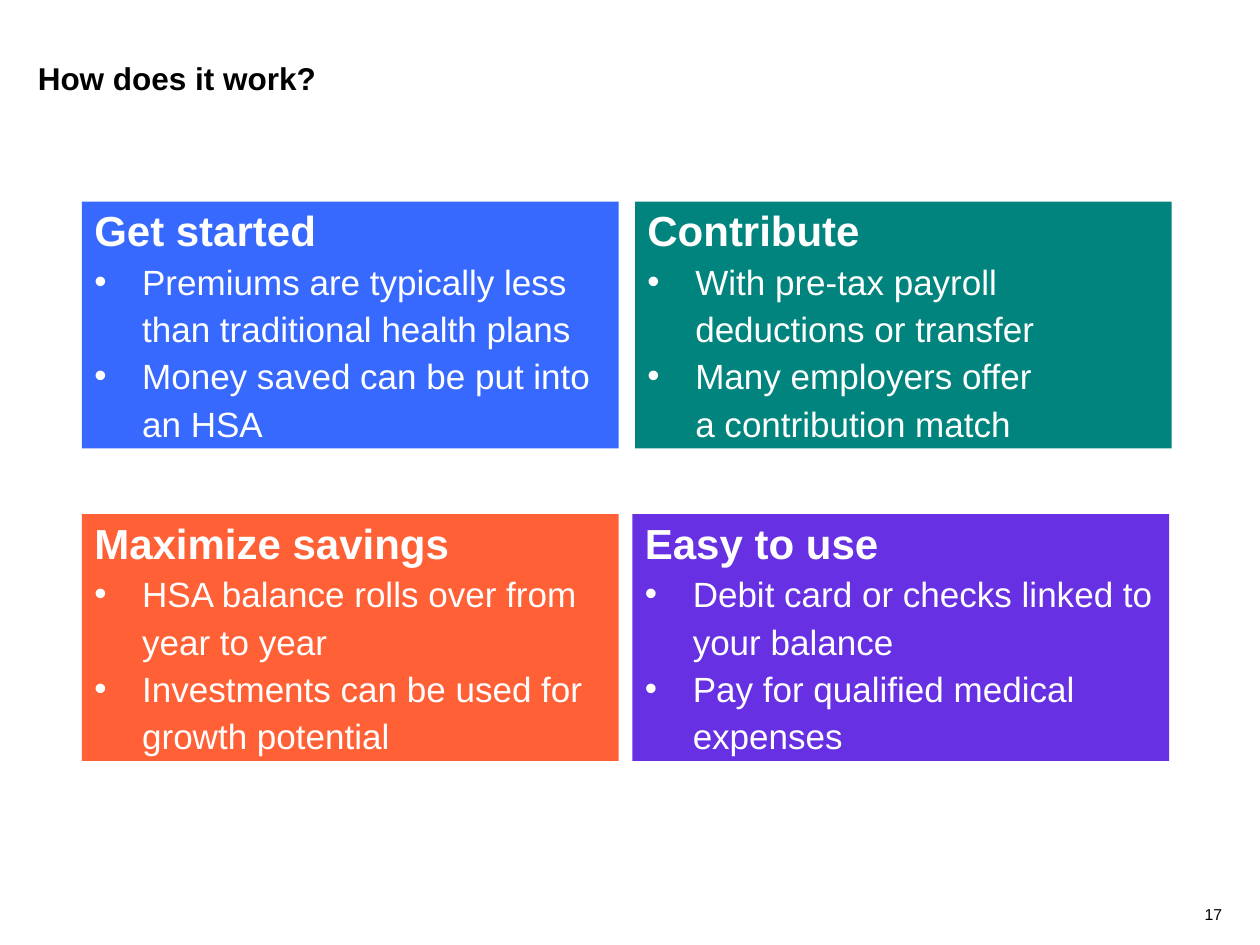
import pptx
import pptx.util
import pptx.dml.color
import pptx.enum.shapes
import pptx.enum.text
from lxml import etree

Inches = pptx.util.Inches
Pt = pptx.util.Pt
ALIGN = pptx.enum.text.PP_ALIGN
ANCHOR = pptx.enum.text.MSO_ANCHOR

BLACK, WHITE = "000000", "FFFFFF"
CARD_WIDTH, CARD_HEIGHT = 4.26, 1.96
BULLET_INDENT = Inches(0.38)

# Left, top, fill, heading, bullet points
CARDS = [
    (0.65, 1.6, "3769FF", "Get started",
     ["Premiums are typically less than traditional health plans",
      "Money saved can be put into an HSA"]),
    (5.04, 1.6, "00847D", "Contribute",
     ["With pre-tax payroll deductions or transfer",
      "Many employers offer\va contribution match"]),
    (0.65, 4.08, "FF6035", "Maximize savings",
     ["HSA balance rolls over from year to year",
      "Investments can be used for growth potential"]),
    (5.02, 4.08, "6730E3", "Easy to use",
     ["Debit card or checks linked to your balance",
      "Pay for qualified medical expenses"]),
]


def color(hex_value):
    return pptx.dml.color.RGBColor.from_string(hex_value)


def set_all(target, values):
    for name, value in values.items():
        setattr(target, name, value)


def write(paragraph, text, size, hex_value, bold=False, **layout):
    paragraph.text = text
    set_all(paragraph, layout)
    for run in paragraph.runs:
        set_all(run.font, {"name": "Arial", "size": Pt(size), "bold": bold})
        run.font.color.rgb = color(hex_value)


def set_frame(frame, anchor, margin_x=0, margin_y=0):
    set_all(frame, {
        "word_wrap": True, "auto_size": pptx.enum.text.MSO_AUTO_SIZE.NONE,
        "vertical_anchor": anchor,
        "margin_left": Inches(margin_x), "margin_right": Inches(margin_x),
        "margin_top": Inches(margin_y), "margin_bottom": Inches(margin_y),
    })


def add_bullet(paragraph):
    properties = paragraph._p.get_or_add_pPr()
    properties.set("marL", str(BULLET_INDENT))
    properties.set("indent", str(-BULLET_INDENT))
    namespace = pptx.oxml.ns.qn("a:buFont"), pptx.oxml.ns.qn("a:buChar")
    etree.SubElement(properties, namespace[0], typeface="Arial")
    etree.SubElement(properties, namespace[1], char="•")


def place_title(slide, left, top, width, height):
    title = slide.shapes.title
    set_all(title, {"left": Inches(left), "top": Inches(top),
                    "width": Inches(width), "height": Inches(height)})
    set_frame(title.text_frame, ANCHOR.TOP)
    write(title.text_frame.paragraphs[0], "How does it work?", 18, BLACK,
          bold=True, alignment=ALIGN.LEFT)


def place_card(slide, left, top, width, height, fill, heading, points):
    card = slide.shapes.add_shape(
        pptx.enum.shapes.MSO_SHAPE.RECTANGLE,
        Inches(left), Inches(top), Inches(width), Inches(height))
    card.shadow.inherit = False
    card.fill.solid()
    card.fill.fore_color.rgb = color(fill)
    card.line.fill.background()

    frame = card.text_frame
    set_frame(frame, ANCHOR.TOP, 0.1, 0.05)
    spacing = {"alignment": ALIGN.LEFT, "line_spacing": Pt(27)}
    write(frame.paragraphs[0], heading, 24, WHITE, bold=True, **spacing)
    for point in points:
        paragraph = frame.add_paragraph()
        add_bullet(paragraph)
        write(paragraph, point, 20, WHITE, **spacing)


def place_page_number(slide, left, top, width, height):
    number = slide.shapes.add_textbox(
        Inches(left), Inches(top), Inches(width), Inches(height))
    set_frame(number.text_frame, ANCHOR.BOTTOM)
    write(number.text_frame.paragraphs[0], "17", 9, BLACK,
          alignment=ALIGN.RIGHT)


def main():
    presentation = pptx.Presentation()
    set_all(presentation, {"slide_width": Inches(10),
                           "slide_height": Inches(7.5)})
    slide = presentation.slides.add_slide(presentation.slide_layouts[5])

    place_title(slide, 0.3, 0.47, 7, 0.7)
    for left, top, *content in CARDS:
        place_card(slide, left, top, CARD_WIDTH, CARD_HEIGHT, *content)
    place_page_number(slide, 9.3, 7.15, 0.4, 0.18)

    presentation.save("out.pptx")


if __name__ == "__main__":
    main()
